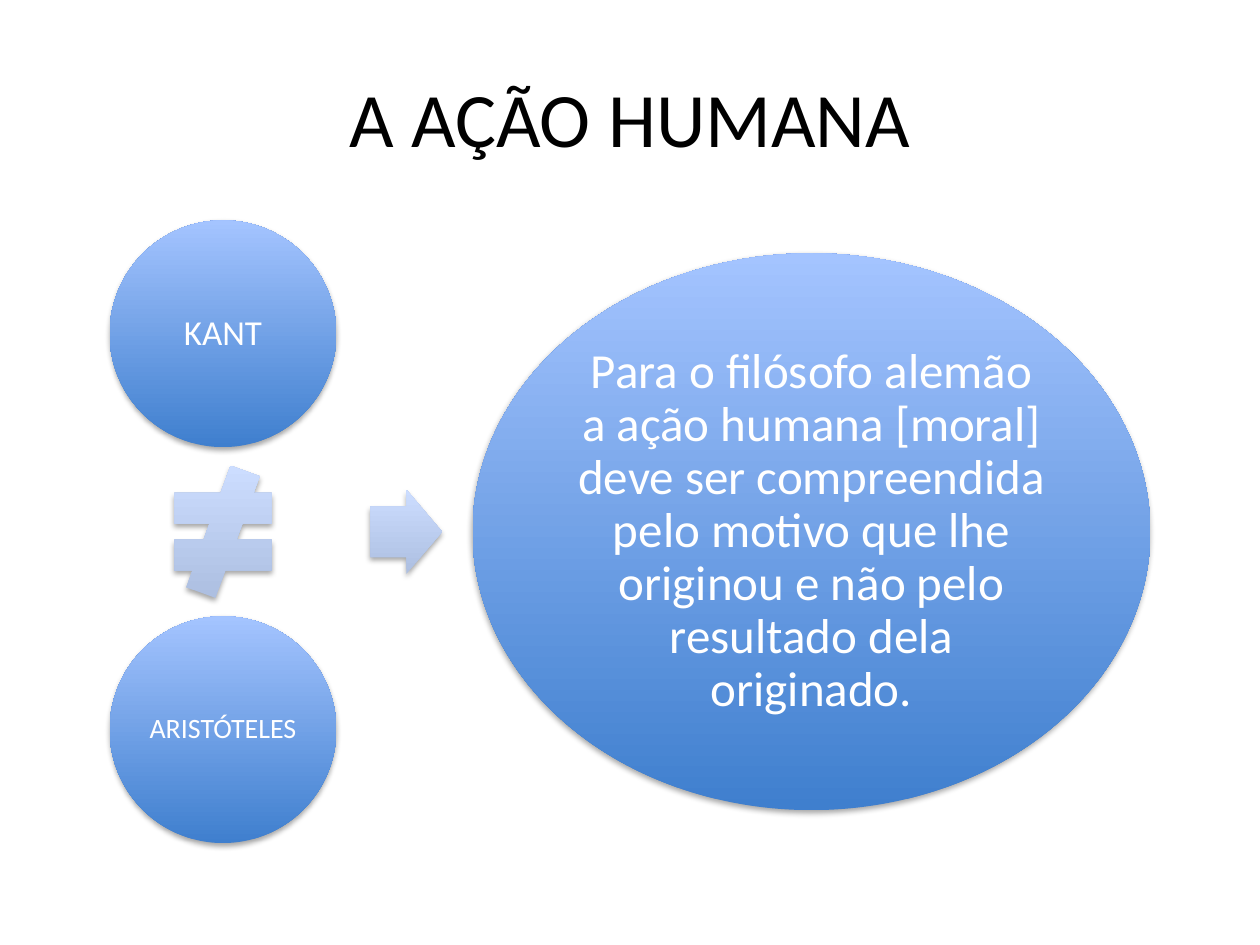
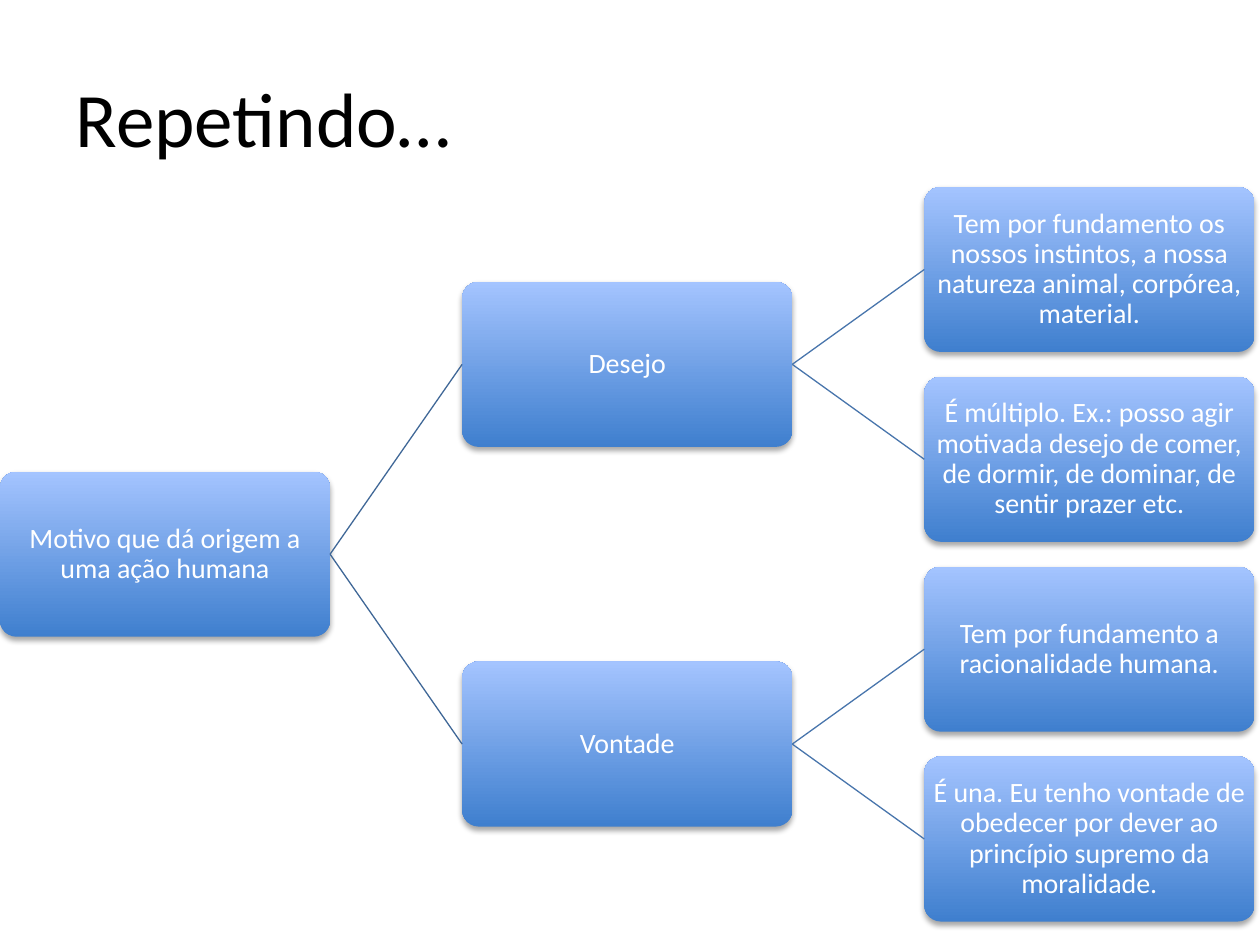
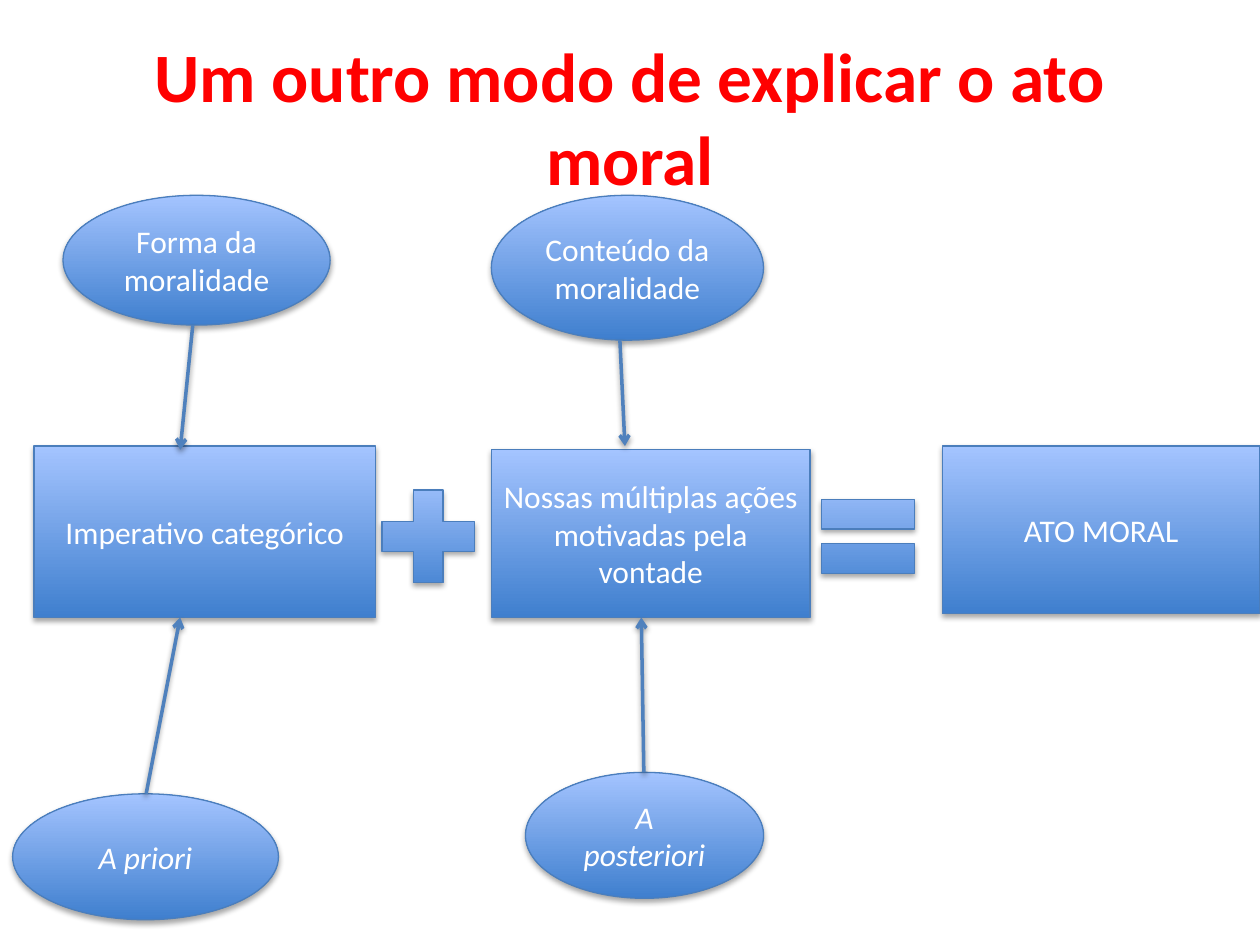
from dataclasses import dataclass

from lxml.etree import SubElement
from pptx import Presentation
from pptx.dml.color import RGBColor
from pptx.enum.shapes import MSO_CONNECTOR, MSO_SHAPE
from pptx.enum.text import MSO_ANCHOR, MSO_AUTO_SIZE, PP_ALIGN
from pptx.oxml.ns import qn
from pptx.util import Emu, Inches, Pt


@dataclass(frozen=True)
class Theme:
    font: str = "Calibri"
    black: str = "000000"
    white: str = "FFFFFF"
    red: str = "FF0000"
    deep: tuple = ("3F7FCE", "A4C4FF")
    pale: tuple = ("ADBFE1", "CCDDFF")
    edge: str = "4B7EBC"
    arrow: str = "4F81BD"
    trunk: str = "3F6797"
    twig: str = "4875AC"
    head: float = 44
    tight: float = 39.6
    large: float = 28
    name: float = 20
    body: float = 18
    small: float = 16
    thin: float = 0.75
    thick: float = 2


T = Theme()
WIDE, HIGH = Inches(10), Inches(7.5)


def across(share):
    """Turn a percentage of the slide's width into a length."""
    return Emu(round(WIDE * share / 100))


def down(share):
    """Turn a percentage of the slide's height into a length."""
    return Emu(round(HIGH * share / 100))


def rgb(code):
    return RGBColor.from_string(code)


def style(par, size, color, align=PP_ALIGN.CENTER, bold=False, slant=False):
    par.alignment = align
    font = par.font
    font.name, font.size = T.font, Pt(size)
    font.bold, font.italic = bold, slant
    font.color.rgb = rgb(color)


def start(deck, text, size=T.head, color=T.black, align=PP_ALIGN.CENTER, bold=False):
    """Add a slide with its title."""
    slide = deck.slides.add_slide(deck.slide_layouts[5])
    frame = slide.shapes.title.text_frame
    frame.text = text
    frame.auto_size = MSO_AUTO_SIZE.NONE
    frame.vertical_anchor = MSO_ANCHOR.MIDDLE
    style(frame.paragraphs[0], size, color, align, bold)
    return slide


def shade(props, drop, alpha):
    """Put a soft shadow straight below a shape or line."""
    effects = props.find(qn("a:effectLst"))
    if effects is None:
        effects = SubElement(props, qn("a:effectLst"))
    outer = SubElement(effects, qn("a:outerShdw"), blurRad=str(Pt(3.15)),
                       dist=str(Pt(drop)), dir="5400000", rotWithShape="0")
    color = SubElement(outer, qn("a:srgbClr"), val=T.black)
    SubElement(color, qn("a:alpha"), val=str(alpha * 1000))


def node(slide, kind, box, fill=T.deep, edge=None):
    """Draw a shaded shape; box is left, top, width, height in percent."""
    left, top, width, height = box
    shape = slide.shapes.add_shape(kind, across(left), down(top),
                                   across(width), down(height))
    shape.fill.gradient()
    shape.fill.gradient_angle = 90
    for stop, color in zip(shape.fill.gradient_stops, fill):
        stop.color.rgb = rgb(color)
    if edge:
        shape.line.color.rgb = rgb(edge)
        shape.line.width = Pt(T.thin)
    else:
        shape.line.fill.background()
    shape.shadow.inherit = False
    shade(shape.element.spPr, 1.8, 35)
    return shape


def label(shape, text, size, inset=None, space=None, slant=False):
    frame = shape.text_frame
    frame.text = text
    frame.word_wrap = True
    frame.vertical_anchor = MSO_ANCHOR.MIDDLE
    if inset is not None:
        frame.margin_left = frame.margin_right = Inches(inset)
        frame.margin_top = frame.margin_bottom = Inches(inset)
    par = frame.paragraphs[0]
    style(par, size, T.white, slant=slant)
    if space:
        par.line_spacing = space


def link(slide, first, last, color, width):
    line = slide.shapes.add_connector(
        MSO_CONNECTOR.STRAIGHT, across(first[0]), down(first[1]),
        across(last[0]), down(last[1]))
    line.line.color.rgb = rgb(color)
    line.line.width = Pt(width)
    return line


def arrow(slide, first, last):
    props = link(slide, first, last, T.arrow, T.thick).element.spPr
    SubElement(props.find(qn("a:ln")), qn("a:tailEnd"), type="arrow")
    shade(props, 1.6, 38)


def join(slide, left, right, color):
    """Link the right side of one box to the left side of the next."""
    line = link(slide, (0, 0), (0, 0), color, T.thin)
    line.begin_connect(left, 3)
    line.end_connect(right, 1)
    SubElement(line.element.spPr, qn("a:effectLst"))


def action(deck):
    slide = start(deck, "A AÇÃO HUMANA")
    axis, middle, gap = 17.7, 56.27, 1.95
    disc, sign = (18, 24), (10.5, 14)
    step = (disc[1] + sign[1]) / 2 + gap

    def centre(kind, x, y, size, fill=T.deep):
        wide, high = size
        return node(slide, kind, (x - wide / 2, y - high / 2, wide, high), fill)

    for text, size, inset, y in (("KANT", T.name, 0.03, middle - step),
                                 ("ARISTÓTELES", T.small, 0.02, middle + step)):
        label(centre(MSO_SHAPE.OVAL, axis, y, disc), text, size, inset, 0.9)
    centre(MSO_SHAPE.MATH_NOT_EQUAL, axis, middle, sign, T.pale)
    point = centre(MSO_SHAPE.RIGHT_ARROW, 32.25, middle, (5.7, 8.93), T.pale)
    point.adjustments[0] = 0.6
    thesis = centre(MSO_SHAPE.OVAL, 64.4, middle, (53.8, 58.93))
    label(thesis, "Para o filósofo alemão a ação humana [moral] deve ser "
          "compreendida pelo motivo que lhe originou e não pelo resultado "
          "dela originado.", T.large, 0.04, 0.9)


def motive(deck):
    slide = start(deck, "Repetindo…", align=PP_ALIGN.LEFT)
    wide, high, top = 26.2, 17.47, 19.78

    def card(text, col, row):
        box = (col * wide * 1.4, top + row * high * 1.15, wide, high)
        shape = node(slide, MSO_SHAPE.ROUNDED_RECTANGLE, box)
        shape.adjustments[0] = 0.1
        label(shape, text, T.small, 0.01, 0.9)
        return shape

    tree = {
        "Desejo": (
            "Tem por fundamento os nossos instintos, a nossa natureza "
            "animal, corpórea, material.",
            "É múltiplo. Ex.: posso agir motivada desejo de comer, de "
            "dormir, de dominar, de sentir prazer etc."),
        "Vontade": (
            "Tem por fundamento a racionalidade humana.",
            "É una. Eu tenho vontade de obedecer por dever ao princípio "
            "supremo da moralidade."),
    }
    root = card("Motivo que dá origem a uma ação humana", 0, 1.5)
    for rank, (text, leaves) in enumerate(tree.items()):
        branch = card(text, 1, 2 * rank + 0.5)
        join(slide, root, branch, T.trunk)
        for place, leaf in enumerate(leaves):
            join(slide, branch, card(leaf, 2, 2 * rank + place), T.twig)


def moral(deck):
    slide = start(deck, "Um outro modo de explicar o ato moral",
                  T.tight, T.red, bold=True)
    rect, oval = MSO_SHAPE.RECTANGLE, MSO_SHAPE.OVAL
    parts = (
        (rect, "Imperativo categórico", (2.7, 47.2, 27.1, 18.13), False),
        (oval, "Forma da moralidade", (5, 20.67, 21.2, 13.73), False),
        (rect, "ATO MORAL", (74.8, 47.2, 25.2, 17.73), False),
        (oval, "Conteúdo da moralidade", (39, 20.67, 21.6, 15.33), False),
        (oval, "A priori", (1, 84, 21.1, 13.33), True),
        (oval, "A posteriori", (41.7, 81.73, 18.9, 13.33), True),
        (rect, "Nossas múltiplas ações motivadas pela vontade",
         (39, 47.6, 25.3, 17.73), False),
    )
    for kind, text, box, slant in parts:
        label(node(slide, kind, box, edge=T.edge), text, T.body, slant=slant)
    for kind, left in ((MSO_SHAPE.MATH_PLUS, 29), (MSO_SHAPE.MATH_EQUAL, 63.9)):
        node(slide, kind, (left, 50.1, 10, 13.33), edge=T.edge)
    for first, last in (((15.3, 34.4), (14.3, 47.6)),
                        ((11.6, 84), (14.3, 65.33)),
                        ((49.2, 36), (49.6, 47.2)),
                        ((51.1, 81.73), (50.9, 65.33))):
        arrow(slide, first, last)


def main():
    deck = Presentation()
    deck.slide_width, deck.slide_height = WIDE, HIGH
    for build in (action, motive, moral):
        build(deck)
    deck.save("out.pptx")


if __name__ == "__main__":
    main()
